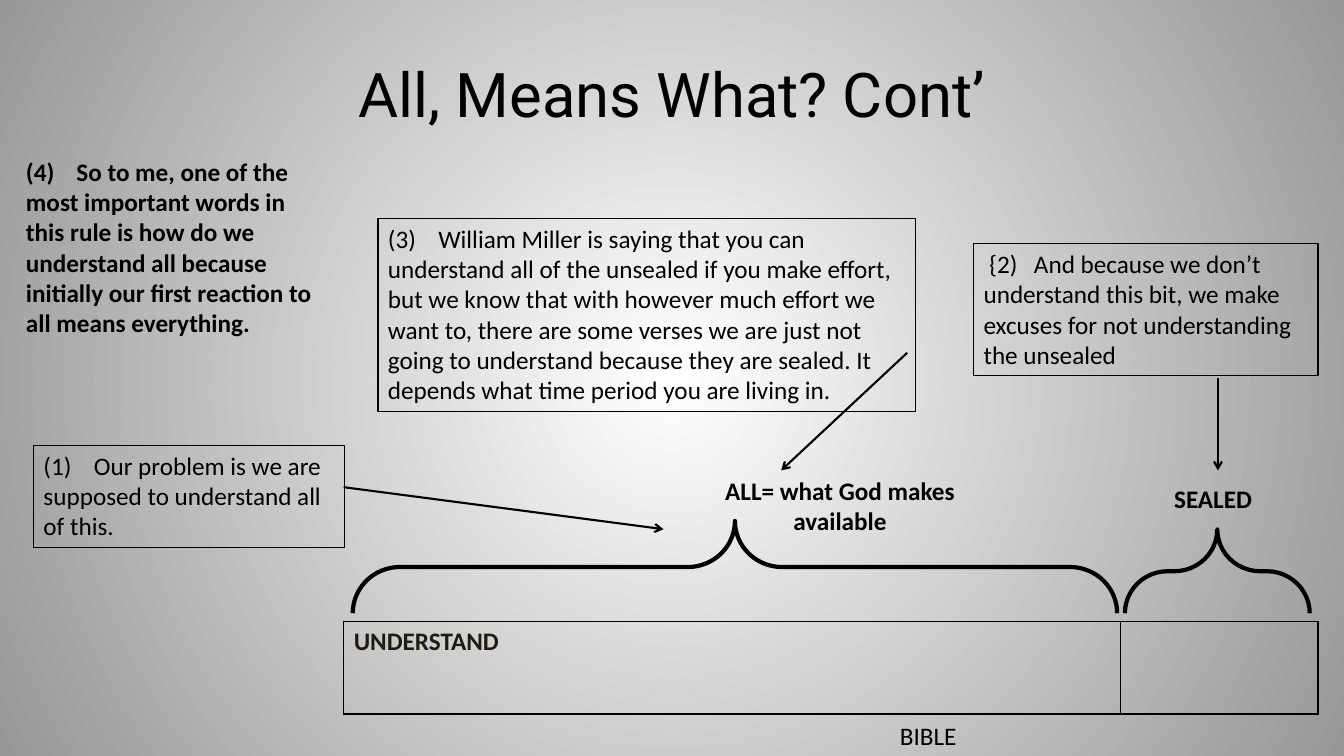
from dataclasses import dataclass

from lxml import etree
from pptx import Presentation
from pptx.dml.color import RGBColor
from pptx.enum.shapes import MSO_CONNECTOR, MSO_SHAPE
from pptx.enum.text import MSO_ANCHOR, MSO_AUTO_SIZE, PP_ALIGN
from pptx.oxml.ns import qn
from pptx.util import Pt

STRAIGHT = MSO_CONNECTOR.STRAIGHT
BRACE = MSO_SHAPE.RIGHT_BRACE
MIDDLE = MSO_ANCHOR.MIDDLE
FIT_TEXT = MSO_AUTO_SIZE.SHAPE_TO_FIT_TEXT
LEFT, CENTER = PP_ALIGN.LEFT, PP_ALIGN.CENTER


@dataclass(frozen=True)
class Theme:
    ink: RGBColor = RGBColor(0x00, 0x00, 0x00)
    understand: RGBColor = RGBColor(0x1E, 0x1C, 0x11)
    glow: RGBColor = RGBColor(0xFF, 0xFF, 0xFF)
    edge: RGBColor = RGBColor(0x97, 0x97, 0x97)
    title_font: str = "Roboto"
    body_font: str = "Calibri"
    title_size: int = 44
    body_size: int = 18


theme = Theme()


def add_words(paragraph, words, bold=False, font=theme.body_font,
              size=theme.body_size, color=theme.ink):
    run = paragraph.add_run()
    run.text = words
    run.font.name = font
    run.font.size = Pt(size)
    run.font.bold = bold
    run.font.color.rgb = color


def add_text_box(frame, align):
    box = slide.shapes.add_textbox(*map(Pt, frame))
    box.text_frame.word_wrap = True
    box.text_frame.auto_size = FIT_TEXT
    box.text_frame.paragraphs[0].alignment = align
    return box


deck = Presentation()
deck.slide_width, deck.slide_height = Pt(960), Pt(540)
slide = deck.slides.add_slide(deck.slide_layouts[6])

# Background: white glow fading to grey
backdrop = slide.background.fill
backdrop.gradient()
for stop, color in zip(backdrop.gradient_stops, (theme.glow, theme.edge)):
    stop.color.rgb = color
gradient = next(slide.element.iter(qn("a:gradFill")))
gradient.remove(gradient.find(qn("a:lin")))
circle = etree.SubElement(gradient, qn("a:path"), path="circle")
etree.SubElement(circle, qn("a:fillToRect"),
                 l="50000", t="50000", r="50000", b="50000")

# Title
title = add_text_box((48, 21.6, 864, 90), CENTER)
title.text_frame.auto_size = MSO_AUTO_SIZE.NONE
title.text_frame.vertical_anchor = MIDDLE
add_words(title.text_frame.paragraphs[0], "All, Means What? Cont’",
          font=theme.title_font, size=theme.title_size)

# Bar of the Bible: understood part and sealed part
bible = slide.shapes.add_table(1, 2, Pt(245.5), Pt(444), Pt(696), Pt(66)).table
bible.first_row = bible.horz_banding = False
bible.rows[0].height = Pt(66)
for column, width in zip(bible.columns, (555, 141)):
    column.width = Pt(width)
for cell in bible.iter_cells():
    cell.fill.background()
    borders = (("L", 1), ("R", 1), ("T", 1), ("B", 2))
    for position, (side, weight) in enumerate(borders):
        border = etree.Element(qn("a:ln" + side), w=str(Pt(weight)))
        fill = etree.SubElement(border, qn("a:solidFill"))
        etree.SubElement(fill, qn("a:srgbClr"), val=str(theme.ink))
        cell.fill._xPr.insert(position, border)
add_words(bible.cell(0, 0).text_frame.paragraphs[0], "UNDERSTAND",
          bold=True, color=theme.understand)

# Braces over the two parts
for frame in ((492, 132, 66, 546), (839.5, 342, 60, 132)):
    brace = slide.shapes.add_shape(BRACE, *map(Pt, frame))
    brace.rotation = 270
    brace.adjustments[0] = 0.51
    brace.adjustments[1] = 0.5
    brace.shadow.inherit = False
    brace.fill.background()
    brace.line.color.rgb = theme.ink
    brace.line.width = Pt(3)

# Centred labels
labels = (
    ("BIBLE", (582, 511, 162, 29), False),
    ("SEALED", (821.5, 342, 90, 30), True),
    ("ALL= what God makes available", (486, 336, 228, 51), True),
)
for words, frame, bold in labels:
    label = add_text_box(frame, CENTER)
    add_words(label.text_frame.paragraphs[0], words, bold)

# Numbered remarks: number, words, frame, indent, tab stop, framed
remarks = (
    ("(1)", "Our problem is we are supposed to understand all of this.",
     (24, 318, 222, 73), 0, 44.3, True),
    ("{2)", "And because we don’t understand this bit, we make excuses for "
     "not understanding the unsealed",
     (695.5, 174, 246, 94), 4, 33, True),
    ("(3)", "William Miller is saying that you can understand all of the "
     "unsealed if you make effort, but we know that with however much effort "
     "we want to, there are some verses we are just not going to understand "
     "because they are sealed. It depends what time period you are living in.",
     (270, 156, 384, 138), 0, 36.4, True),
    ("(4)", "So to me, one of the most important words in this rule is how do "
     "we understand all because initially our first reaction to all means "
     "everything.",
     (11.5, 108, 222, 138), 0, 32, False),
)
for number, words, frame, indent, tab_stop, framed in remarks:
    remark = add_text_box(frame, LEFT)
    if framed:
        remark.line.color.rgb = theme.ink
        remark.line.width = Pt(0.75)
    paragraph = remark.text_frame.paragraphs[0]
    add_words(paragraph, f"{number}\t{words}", bold=not framed)
    layout = paragraph._p.get_or_add_pPr()
    layout.set("marL", "0")
    layout.set("indent", str(Pt(indent)))
    tabs = etree.SubElement(layout, qn("a:tabLst"))
    etree.SubElement(tabs, qn("a:tab"), pos=str(Pt(tab_stop)), algn="l")

# Arrows from the remarks to the parts
for ends in ((245.5, 348, 474, 378), (870, 270, 870, 336), (648, 252, 558, 336)):
    arrow = slide.shapes.add_connector(STRAIGHT, *map(Pt, ends))
    arrow.line.color.rgb = theme.ink
    arrow.line.width = Pt(1.5)
    etree.SubElement(arrow.line._get_or_add_ln(), qn("a:tailEnd"), type="arrow")
    etree.SubElement(arrow.element.spPr, qn("a:effectLst"))

deck.save("out.pptx")
